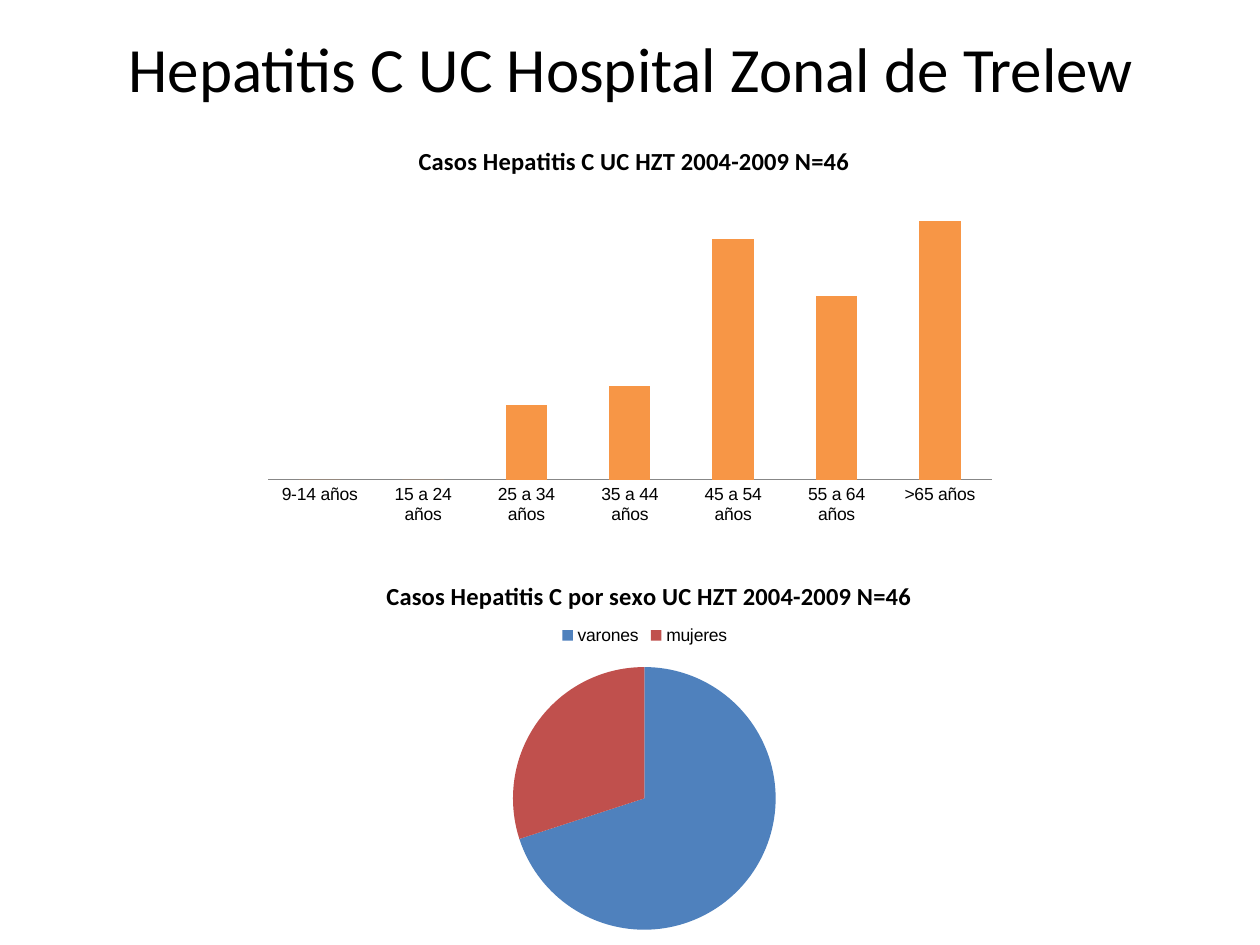
from lxml import etree
from pptx import Presentation, util as u
from pptx.chart.data import CategoryChartData
from pptx.dml.color import RGBColor
from pptx.enum import chart as ch, text
from pptx.oxml.ns import qn

PX = 914400 // 126
BLACK = RGBColor(0, 0, 0)
GRAY = RGBColor(0x87, 0x87, 0x87)
ORANGE = RGBColor(0xF7, 0x96, 0x46)
BLUE = RGBColor(0x4F, 0x81, 0xBD)
RED = RGBColor(0xC0, 0x50, 0x4D)

HEAD = "Hepatitis C UC Hospital Zonal de Trelew"
HEAD_BOX = (64, 0, 1134, 135)

# Boxes are left, top, width, height in px on the slide.
AGES = dict(
    kind=ch.XL_CHART_TYPE.COLUMN_CLUSTERED,
    title="Casos Hepatitis C UC HZT 2004-2009 N=46",
    cats=["9-14 años", "15 a 24 años", "25 a 34 años", "35 a 44 años",
          "45 a 54 años", "55 a 64 años", ">65 años"],
    vals=[0, 0, 29, 36, 93, 71, 100],
    box=(253, 115, 753, 417), plot=(268, 221, 724, 259), name=(414, 139))
SEXES = dict(
    kind=ch.XL_CHART_TYPE.PIE,
    title="Casos Hepatitis C por sexo UC HZT 2004-2009 N=46",
    cats=["varones", "mujeres"],
    vals=[70, 30],
    box=(282, 552, 724, 397), plot=(513, 667, 263, 263), name=(382, 575))
KEY_BOX = (556, 623, 178, 25)


def emu(box):
    return [v * PX for v in box]


def place(part, area, box, inner=False):
    """Pin a chart part to a px area, as fractions of the chart's box."""
    for old in part.findall(qn("c:layout")):
        part.remove(old)
    layout = etree.Element(qn("c:layout"))
    manual = etree.SubElement(layout, qn("c:manualLayout"))
    left, top, wide, high = box
    spots = [(area[0] - left) / wide, (area[1] - top) / high]
    spots += [v / full for v, full in zip(area[2:], (wide, high))]
    items = [("layoutTarget", "inner")] if inner else []
    items += [("xMode", "edge"), ("yMode", "edge")]
    items += [(k, f"{v:.3f}") for k, v in zip("xywh", spots)]
    for tag, val in items:
        etree.SubElement(manual, qn(f"c:{tag}")).set("val", val)
    over = part.find(qn("c:overlay"))
    if over is None:
        part.insert(0, layout)
    else:
        over.set("val", "1")
        over.addprevious(layout)


def paint(fill, color):
    fill.solid()
    fill.fore_color.rgb = color


def style(font, name, size):
    font.name, font.size = name, u.Pt(size)
    font.color.rgb = BLACK


def add_chart(slide, info):
    data = CategoryChartData()
    data.categories = info["cats"]
    data.add_series("Series 1", info["vals"])
    chart = slide.shapes.add_chart(info["kind"], *emu(info["box"]), data).chart
    style(chart.font, "Arial", 10)
    frame = chart.chart_title.text_frame
    frame.text = info["title"]
    font = frame.paragraphs[0].runs[0].font
    style(font, "Calibri", 14)
    font.bold = True
    place(chart.chart_title._element, info["name"], info["box"])
    area = chart._chartSpace.chart.plotArea
    place(area, info["plot"], info["box"], inner=True)
    return chart


def add_ages(slide):
    chart = add_chart(slide, AGES)
    chart.has_legend = False
    plot = chart.plots[0]
    plot.vary_by_categories = False
    plot.gap_width = 150
    paint(plot.series[0].format.fill, ORANGE)
    axis = chart.value_axis
    axis.minimum_scale, axis.maximum_scale = 0, 100
    axis.has_major_gridlines = False
    axis.visible = False
    axis = chart.category_axis
    axis.major_tick_mark = ch.XL_TICK_MARK.NONE
    axis.format.line.color.rgb = GRAY
    axis.format.line.width = u.Pt(0.75)


def add_sexes(slide):
    chart = add_chart(slide, SEXES)
    plot = chart.plots[0]
    plot.vary_by_categories = True
    for i, color in enumerate((BLUE, RED)):
        paint(plot.series[0].points[i].format.fill, color)
    chart.has_legend = True
    key = chart.legend
    key.position = ch.XL_LEGEND_POSITION.TOP
    key.include_in_layout = True
    style(key.font, "Arial", 10)
    place(key._element, KEY_BOX, SEXES["box"])


def add_head(slide):
    frame = slide.shapes.add_textbox(*emu(HEAD_BOX)).text_frame
    frame.word_wrap = True
    frame.vertical_anchor = text.MSO_ANCHOR.MIDDLE
    frame.text = HEAD
    para = frame.paragraphs[0]
    para.alignment = text.PP_ALIGN.CENTER
    style(para.runs[0].font, "Calibri", 36)


def main():
    deck = Presentation()
    deck.slide_width, deck.slide_height = emu((1260, 945))
    slide = deck.slides.add_slide(deck.slide_layouts[6])
    add_ages(slide)
    add_sexes(slide)
    add_head(slide)
    deck.save("out.pptx")


if __name__ == "__main__":
    main()
